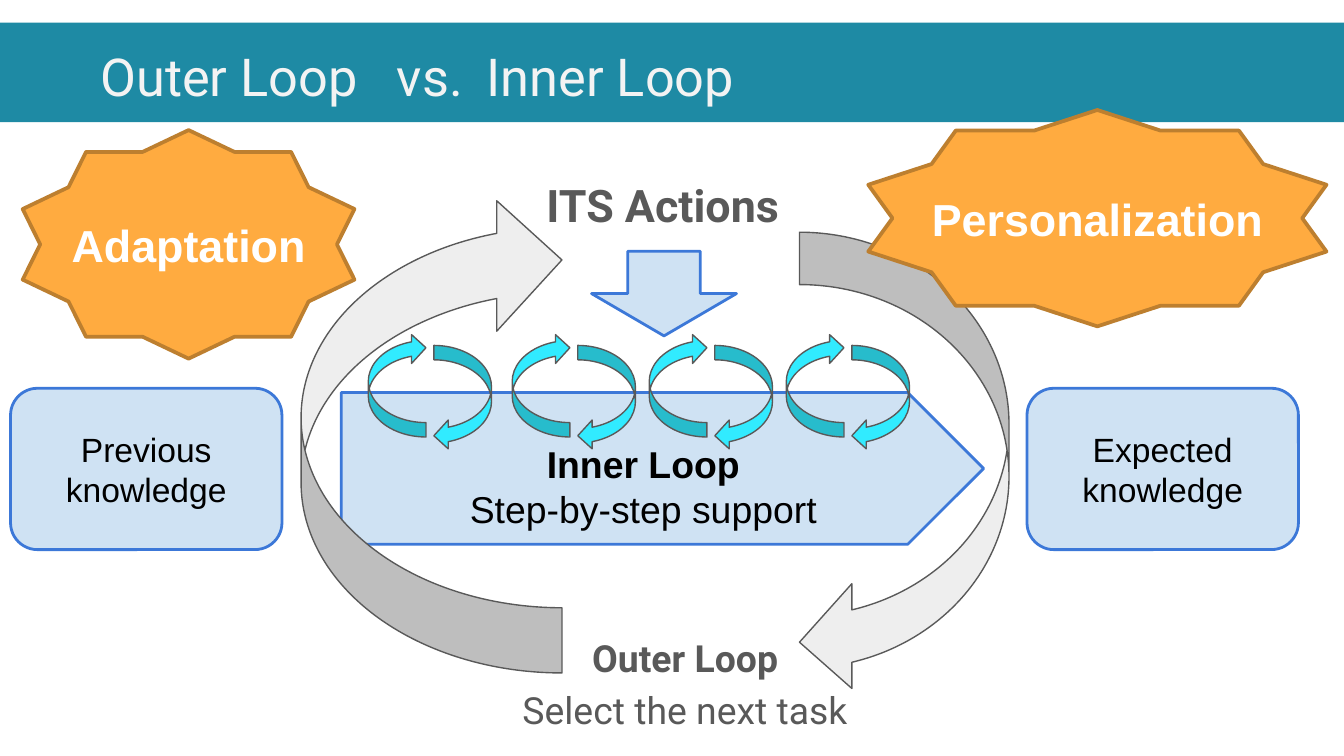
"""Build a slide that contrasts the outer and inner loops of a tutoring system."""
from dataclasses import dataclass
from typing import Any, Optional

import lxml.etree
import pptx
import pptx.dml.color
import pptx.enum.shapes
import pptx.enum.text
import pptx.oxml.ns
import pptx.util

Cm = pptx.util.Cm
Pt = pptx.util.Pt
Kind = pptx.enum.shapes.MSO_SHAPE
Anchor = pptx.enum.text.MSO_ANCHOR
Align = pptx.enum.text.PP_ALIGN

PALE_BLUE, BLUE = "CFE2F3", "3C78D8"
ORANGE, BROWN = "FFAB40", "BD7F2F"
GREY, LIGHT_GREY, CYAN = "595959", "EEEEEE", "31EBFF"
INSET = 0.25
SPACED = {"line_spacing": 1.15, "space_after": Pt(16)}


@dataclass(frozen=True)
class Box:
    left: float
    top: float
    width: float
    height: float

    def lengths(self) -> tuple:
        return Cm(self.left), Cm(self.top), Cm(self.width), Cm(self.height)


@dataclass(frozen=True)
class Style:
    fill: str
    line: Optional[str] = None
    weight: float = 1.5


@dataclass(frozen=True)
class Line:
    text: str
    bold: bool = False


@dataclass(frozen=True)
class Label:
    paragraphs: tuple
    size: float
    color: str = "000000"
    font: str = "Arial"
    anchor: Any = Anchor.MIDDLE
    inset: float = INSET


@dataclass(frozen=True)
class LabelledShape:
    kind: Any
    box: Box
    style: Style
    label: Label


def rgb(value: str) -> pptx.dml.color.RGBColor:
    return pptx.dml.color.RGBColor.from_string(value)


def apply(target: Any, values: dict) -> None:
    for name, value in values.items():
        setattr(target, name, value)


def format_frame(frame: Any, anchor: Any, inset: float) -> None:
    apply(frame, {
        "word_wrap": True,
        "auto_size": pptx.enum.text.MSO_AUTO_SIZE.NONE,
        "vertical_anchor": anchor,
        "margin_left": Cm(inset),
        "margin_right": Cm(inset),
        "margin_top": Cm(inset),
        "margin_bottom": Cm(inset),
    })


def format_font(font: Any, name: str, size: float, color: str, bold: bool) -> None:
    apply(font, {"name": name, "size": Pt(size), "bold": bold})
    font.color.rgb = rgb(color)


def write_label(frame: Any, label: Label, spacing: dict) -> None:
    format_frame(frame, label.anchor, label.inset)
    for index, lines in enumerate(label.paragraphs):
        paragraph = frame.add_paragraph() if index else frame.paragraphs[0]
        apply(paragraph, {"alignment": Align.CENTER, **spacing})
        for position, line in enumerate(lines):
            if position:
                paragraph.add_line_break()
            run = paragraph.add_run()
            run.text = line.text
            format_font(run.font, label.font, label.size, label.color, line.bold)


def draw_shape(shapes: Any, kind: Any, box: Box, style: Style, rotation: float = 0) -> Any:
    shape = shapes.add_shape(kind, *box.lengths())
    shape.shadow.inherit = False
    shape.rotation = rotation
    shape.fill.solid()
    shape.fill.fore_color.rgb = rgb(style.fill)
    if style.line:
        shape.line.color.rgb = rgb(style.line)
        shape.line.width = Pt(style.weight)
    else:
        shape.line.fill.background()
    return shape


def draw_labelled(shapes: Any, item: LabelledShape) -> None:
    shape = draw_shape(shapes, item.kind, item.box, item.style)
    write_label(shape.text_frame, item.label, {})


def draw_caption(shapes: Any, box: Box, label: Label) -> None:
    write_label(shapes.add_textbox(*box.lengths()).text_frame, label, SPACED)


def draw_loop(shapes: Any, down: Box, up: Box, fill: str) -> None:
    style = Style(fill, GREY, 0.75)
    draw_shape(shapes, Kind.CURVED_LEFT_ARROW, down, style)
    draw_shape(shapes, Kind.CURVED_LEFT_ARROW, up, style, 180)


def write_title(title: Any, box: Box, text: str, stops: tuple) -> None:
    apply(title, dict(zip(("left", "top", "width", "height"), box.lengths())))
    format_frame(title.text_frame, Anchor.TOP, INSET)
    paragraph = title.text_frame.paragraphs[0]
    paragraph.alignment = Align.LEFT
    qualified = pptx.oxml.ns.qn
    tabs = lxml.etree.SubElement(paragraph._p.get_or_add_pPr(), qualified("a:tabLst"))
    for stop in stops:
        lxml.etree.SubElement(tabs, qualified("a:tab"), pos=str(Cm(stop)), algn="l")
    run = paragraph.add_run()
    run.text = text
    format_font(run.font, "Roboto", 28, "F3F3F3", False)


def knowledge(left: float, text: str) -> LabelledShape:
    return LabelledShape(Kind.ROUNDED_RECTANGLE, Box(left, 7.34, 5.13, 3.05),
                         Style(PALE_BLUE, BLUE), Label(((Line(text),),), 18))


def star(box: Box, text: str) -> LabelledShape:
    label = Label(((Line(text, True),),), 24, "FFFFFF", inset=0)
    return LabelledShape(Kind.STAR_10_POINT, box, Style(ORANGE, BROWN, 2), label)


def main() -> None:
    presentation = pptx.Presentation()
    apply(presentation, {"slide_width": Cm(25.4), "slide_height": Cm(14.29)})
    slide = presentation.slides.add_slide(presentation.slide_layouts[5])
    shapes = slide.shapes

    banner = draw_shape(shapes, Kind.RECTANGLE, Box(0, 0.43, 25.4, 1.88), Style("1E8AA4"))
    shapes.title._element.addprevious(banner._element)
    write_title(shapes.title, Box(1.65, 0.58, 23.67, 1.6),
                "Outer Loop\tvs.\tInner Loop", (5.6, 7.3))

    inner = Label(((Line("Inner Loop", True),), (Line("Step-by-step support"),)),
                  20, anchor=Anchor.BOTTOM)
    draw_labelled(shapes, LabelledShape(Kind.PENTAGON, Box(6.45, 7.42, 12.14, 2.87),
                                        Style(PALE_BLUE, BLUE), inner))
    draw_shape(shapes, Kind.DOWN_ARROW, Box(11.18, 4.75, 2.74, 1.6), Style(PALE_BLUE, BLUE))
    draw_caption(shapes, Box(10.06, 2.95, 4.93, 1.19),
                 Label(((Line("ITS Actions", True),),), 24, GREY, "Roboto", Anchor.TOP))

    draw_loop(shapes, Box(15.11, 4.39, 3.96, 8.74), Box(5.69, 3.68, 4.93, 9.04), LIGHT_GREY)
    for left in (6.96, 9.68, 12.27, 14.86):
        group = shapes.add_group_shape()
        draw_loop(group.shapes, Box(left + 1.24, 6.53, 1.09, 1.98),
                  Box(left, 6.3, 1.09, 1.96), CYAN)

    outer = (Line("Outer Loop", True), Line("Select the next task"))
    draw_caption(shapes, Box(9.37, 11.63, 7.16, 1.19),
                 Label((outer,), 20, GREY, "Roboto", Anchor.TOP))

    for item in (
        knowledge(0.2, "Previous knowledge"),
        knowledge(19.41, "Expected knowledge"),
        star(Box(0.43, 2.46, 6.27, 4.32), "Adaptation"),
        star(Box(16.41, 2.08, 8.66, 4.09), "Personalization"),
    ):
        draw_labelled(shapes, item)

    presentation.save("out.pptx")


if __name__ == "__main__":
    main()
